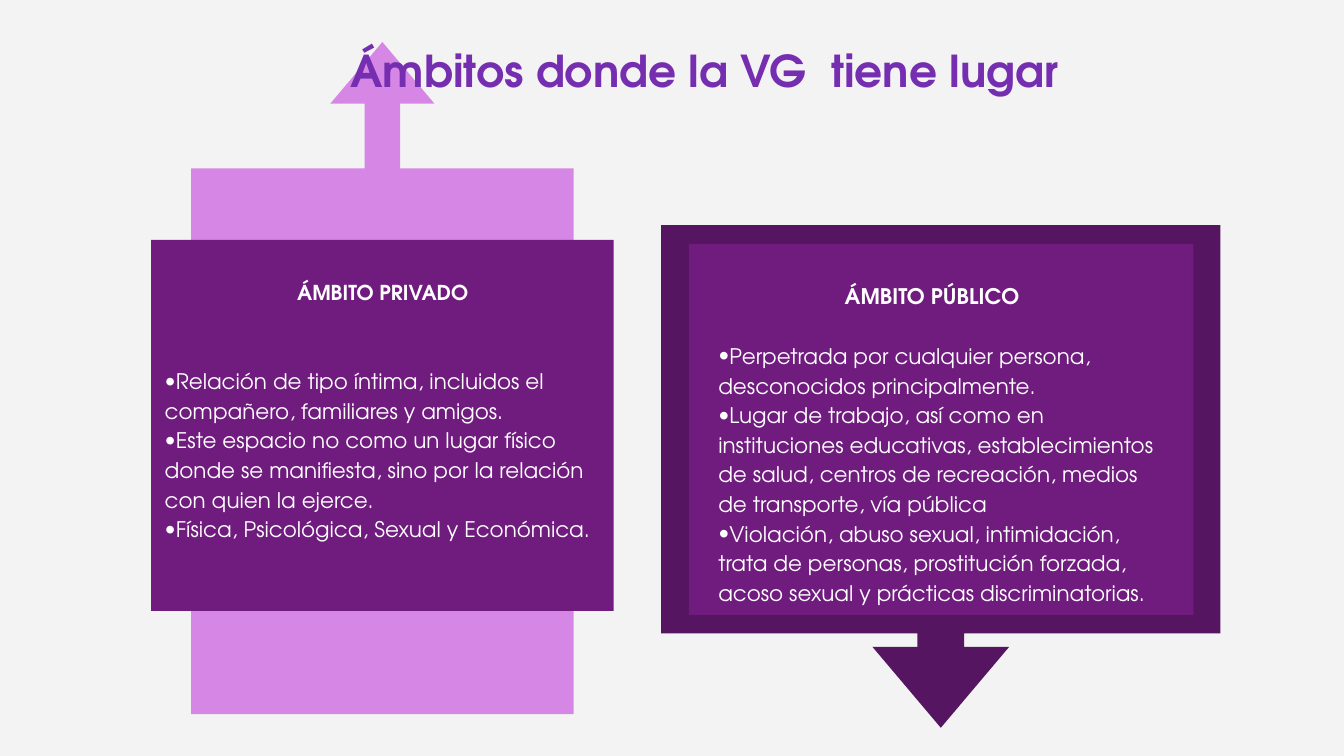
from pptx import Presentation, util as u
from pptx.dml.color import RGBColor
from pptx.enum import shapes, text
from lxml import etree

COLORS = {"paper": "F3F3F3", "lilac": "D686E4", "panel": "701C7F",
          "dark": "551561", "title": "762EB1", "white": "FFFFFF"}
FONT = "TeX Gyre Adventor"
DRAWING = "{http://schemas.openxmlformats.org/drawingml/2006/main}"

deck = Presentation()
deck.slide_width, deck.slide_height = u.Inches(20), u.Inches(11.25)
slide = deck.slides.add_slide(deck.slide_layouts[5])
slide.background.fill.solid()
slide.background.fill.fore_color.rgb = RGBColor.from_string(COLORS["paper"])


def add_block(kind, box, color, rotation=0):
    block = slide.shapes.add_shape(kind, *map(u.Inches, box))
    block.shadow.inherit = False
    block.fill.solid()
    block.fill.fore_color.rgb = RGBColor.from_string(COLORS[color])
    block.line.fill.background()
    block.rotation = rotation
    return block


def write(holder, lines, size, insets, color="white", bold=False, spacing=1.15,
          align=text.PP_ALIGN.LEFT, anchor=text.MSO_ANCHOR.TOP, bullets=False):
    frame = holder.text_frame
    frame.word_wrap = True
    frame.auto_size = text.MSO_AUTO_SIZE.NONE
    frame.vertical_anchor = anchor
    (frame.margin_left, frame.margin_top,
     frame.margin_right, frame.margin_bottom) = map(u.Inches, insets)
    frame.text = "\n".join(lines)
    for line in frame.paragraphs:
        line.alignment = align
        line.line_spacing = spacing
        if bullets:
            props = line._p.get_or_add_pPr()
            props.set("marL", "0")
            props.set("indent", "0")
            etree.SubElement(props, DRAWING + "buFont", typeface=FONT)
            etree.SubElement(props, DRAWING + "buChar", char="•")
        line.font.name = FONT
        line.font.size = u.Pt(size)
        line.font.bold = bold
        line.font.color.rgb = RGBColor.from_string(COLORS[color])


callouts = [((0.69, 2.78, 10, 5.69), "lilac", 270),
            ((10.26, 2.93, 7.48, 8.32), "dark", 90)]
panels = [(2.25, 3.57, 6.88, 5.52), (10.25, 3.63, 7.51, 5.52)]
areas = []
for (box, color, rotation), panel in zip(callouts, panels):
    arrow = add_block(shapes.MSO_SHAPE.RIGHT_ARROW_CALLOUT, box, color, rotation)
    for index, value in enumerate((0.093, 0.136, 0.161, 0.812)):
        arrow.adjustments[index] = value
    areas.append(add_block(shapes.MSO_SHAPE.RECTANGLE, panel, "panel"))

write(areas[0], [
    "Relación de tipo íntima, incluidos el compañero, familiares y amigos.",
    "Este espacio no como un lugar físico donde se manifiesta, sino por la relación con quien la ejerce.",
    "Física, Psicológica, Sexual y Económica.",
], 23, (0.2, 1.03, 0.2, 0.2), anchor=text.MSO_ANCHOR.MIDDLE, bullets=True)

private_heading = slide.shapes.add_textbox(*map(u.Inches, (2.81, 3.91, 5.77, 1.6)))
write(private_heading, ["ÁMBITO PRIVADO"], 22, (0.2,) * 4, bold=True,
      align=text.PP_ALIGN.CENTER)

public_heading = slide.shapes.add_textbox(*map(u.Inches, (10.85, 3.96, 6.3, 4.6)))
write(public_heading, ["ÁMBITO PÚBLICO"], 23, (1.72, 0.2, 0.2, 0.2), bold=True)

public_points = slide.shapes.add_textbox(*map(u.Inches, (10.59, 4.95, 6.88, 5.04)))
write(public_points, [
    "Perpetrada por cualquier persona, desconocidos principalmente.",
    "Lugar de trabajo, así como en instituciones educativas, establecimientos de salud, centros de recreación, medios de transporte, vía pública",
    "Violación, abuso sexual, intimidación, trata de personas, prostitución forzada, acoso sexual y prácticas discriminatorias.",
], 23, (0.1,) * 4, bullets=True)

title = slide.shapes.title
title.left, title.top, title.width, title.height = map(u.Inches, (3.18, 0.55, 14.62, 0.99))
write(title, ["Ámbitos donde la VG  tiene lugar"], 47, (0.1,) * 4, "title",
      bold=True, spacing=1.0, align=text.PP_ALIGN.CENTER)
title.element.getparent().append(title.element)

deck.save("out.pptx")
